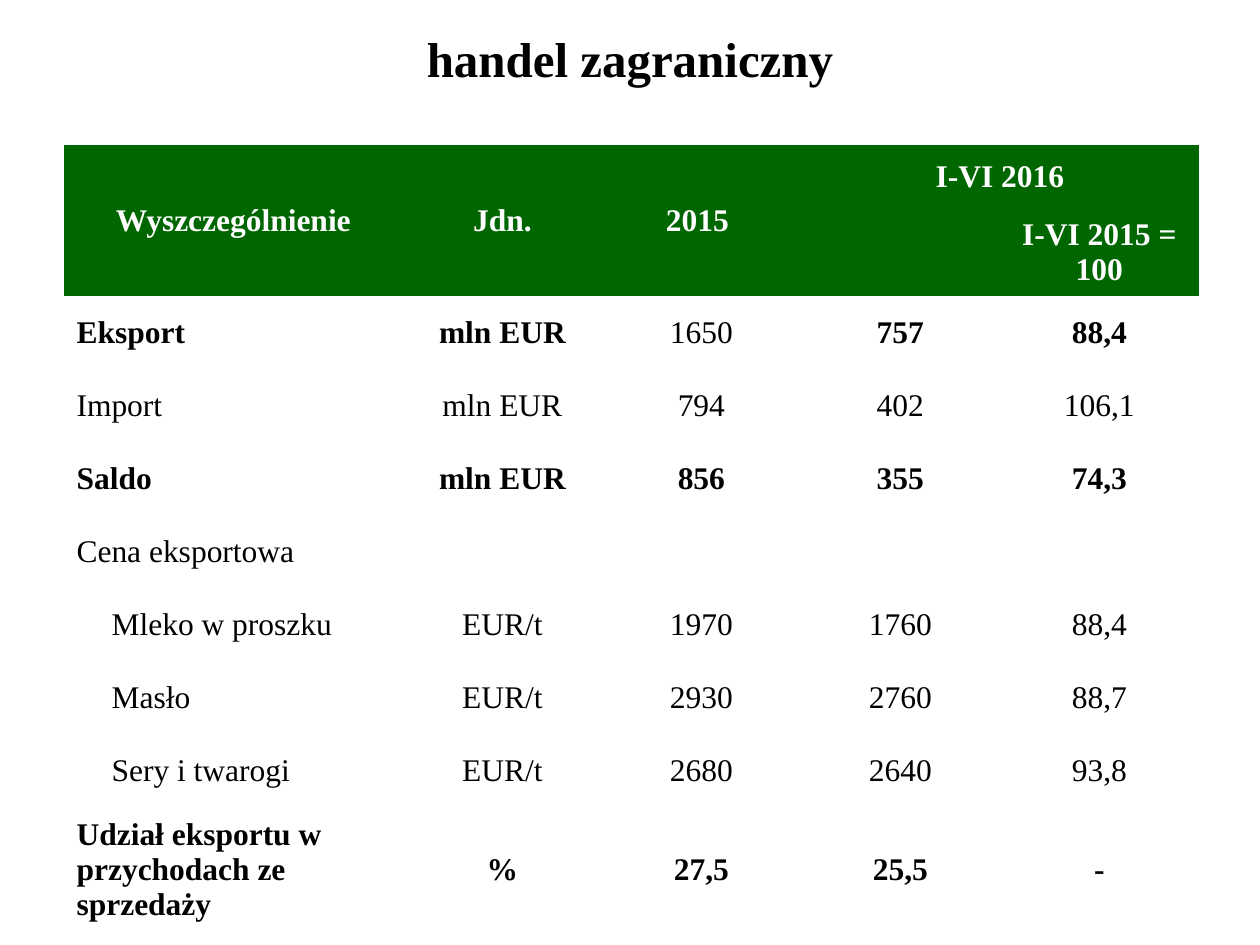
import pptx
import pptx.dml.color
import pptx.enum.text
import pptx.oxml.ns
import pptx.util
import lxml.etree

PX = 914400 // 126
FONT = "Times New Roman"
COLORS = {"header": "006600", "body": "FFFFFF", "light": "FFFFFF", "dark": "000000"}
ALIGN = pptx.enum.text.PP_ALIGN
MIDDLE = pptx.enum.text.MSO_ANCHOR.MIDDLE

COLUMN_WIDTHS = [339, 199, 199, 199, 199]
ROW_HEIGHTS = [63, 63] + [73] * 7 + [88]
INDENT = 35
HEADER = [
    ["Wyszczególnienie", "Jdn.", "2015 ", "I-VI 2016", ""],
    ["", "", "", "", "I-VI 2015 = 100"],
]
MERGES = [(0, 0, 1, 0), (0, 1, 1, 1), (0, 2, 1, 2), (0, 3, 0, 4)]
BODY = [
    ["Eksport", "mln EUR", "1650", "757", "88,4"],
    ["Import", "mln EUR", "794", "402", "106,1"],
    ["Saldo", "mln EUR", "856", "355", "74,3"],
    ["Cena eksportowa", "", "", "", ""],
    ["Mleko w proszku", "EUR/t", "1970", "1760", "88,4"],
    ["Masło", "EUR/t", "2930", "2760", "88,7"],
    ["Sery i twarogi", "EUR/t", "2680", "2640", "93,8"],
    ["Udział eksportu w przychodach ze sprzedaży", "%", "27,5", "25,5", "-"],
]
BOLD_ROWS = {"Eksport", "Saldo", "Udział eksportu w przychodach ze sprzedaży"}
INDENTED_ROWS = {"Mleko w proszku", "Masło", "Sery i twarogi"}
PLAIN_VALUES = {"1650"}


def px(length):
    """Turn pixels into EMU."""
    return pptx.util.Emu(length * PX)


def rgb(name):
    """Look up a named colour."""
    return pptx.dml.color.RGBColor.from_string(COLORS[name])


def add_span(para, text, size, color, bold, align):
    """Add one formatted run to a paragraph."""
    para.alignment = align
    span = para.add_run()
    span.text = text
    span.font.name = FONT
    span.font.size = pptx.util.Pt(size)
    span.font.bold = bold
    span.font.color.rgb = rgb(color)


def add_title(page, left, top, width, height):
    """Place the centred slide title."""
    box = page.shapes.add_textbox(px(left), px(top), px(width), px(height))
    frame = box.text_frame
    frame.word_wrap = True
    frame.vertical_anchor = MIDDLE
    add_span(frame.paragraphs[0], "handel zagraniczny", 28, "dark", True, ALIGN.CENTER)


def clear_borders(cell):
    """Hide the four borders of a cell."""
    properties = cell._tc.get_or_add_tcPr()
    for position, side in enumerate(("a:lnL", "a:lnR", "a:lnT", "a:lnB")):
        line = lxml.etree.Element(pptx.oxml.ns.qn(side), w="0")
        lxml.etree.SubElement(line, pptx.oxml.ns.qn("a:noFill"))
        properties.insert(position, line)


def fill_cell(cell, text, fill, color, bold, align):
    """Style a table cell and write its text."""
    cell.fill.solid()
    cell.fill.fore_color.rgb = rgb(fill)
    clear_borders(cell)
    cell.vertical_anchor = MIDDLE
    if text:
        add_span(cell.text_frame.paragraphs[0], text, 18, color, bold, align)


def add_trade_table(page, left, top):
    """Place the foreign trade table."""
    frame = page.shapes.add_table(
        len(ROW_HEIGHTS), len(COLUMN_WIDTHS), px(left), px(top),
        px(sum(COLUMN_WIDTHS)), px(sum(ROW_HEIGHTS)))
    table = frame.table
    table.first_row = False
    table.horz_banding = False
    for column, width in zip(table.columns, COLUMN_WIDTHS):
        column.width = px(width)
    for row, height in zip(table.rows, ROW_HEIGHTS):
        row.height = px(height)

    for r, texts in enumerate(HEADER):
        for c, text in enumerate(texts):
            fill_cell(table.cell(r, c), text, "header", "light", True, ALIGN.CENTER)
    for r, texts in enumerate(BODY, len(HEADER)):
        for c, text in enumerate(texts):
            bold = texts[0] in BOLD_ROWS and text not in PLAIN_VALUES
            align = ALIGN.CENTER if c else ALIGN.LEFT
            fill_cell(table.cell(r, c), text, "body", "dark", bold, align)
        if texts[0] in INDENTED_ROWS:
            para = table.cell(r, 0).text_frame.paragraphs[0]
            para._p.get_or_add_pPr().set("marL", str(px(INDENT)))
    for first_row, first_column, last_row, last_column in MERGES:
        table.cell(first_row, first_column).merge(table.cell(last_row, last_column))


def main():
    """Build and save the deck."""
    deck = pptx.Presentation()
    deck.slide_width = pptx.util.Inches(10)
    deck.slide_height = pptx.util.Inches(7.5)
    page = deck.slides.add_slide(deck.slide_layouts[6])
    add_title(page, 63, 0, 1134, 116)
    add_trade_table(page, 64, 145)
    deck.save("out.pptx")


if __name__ == "__main__":
    main()
